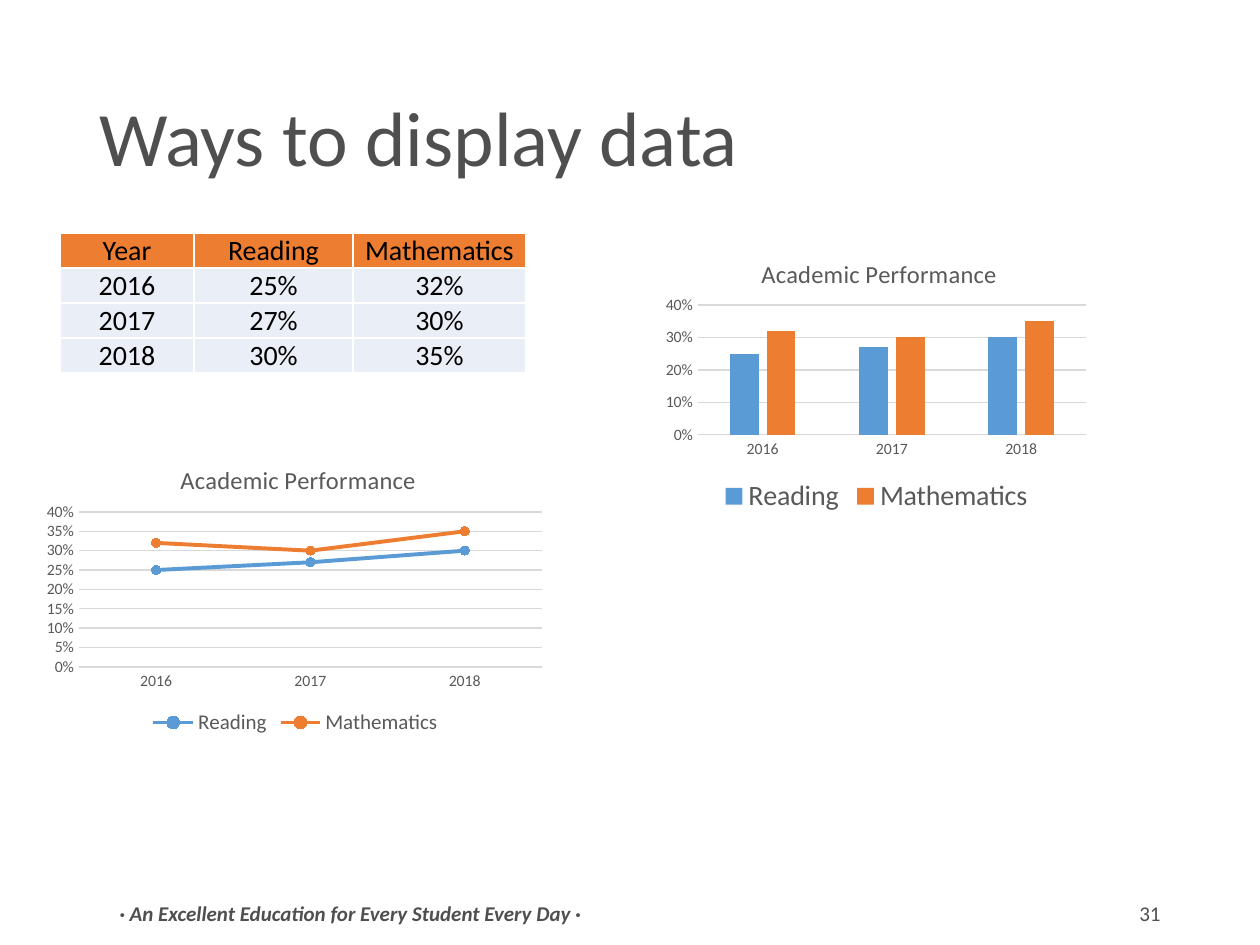
from pptx import Presentation
from pptx.chart.data import CategoryChartData
from pptx.dml.color import RGBColor as Rgb
from pptx.enum.chart import XL_CHART_TYPE as ChartType
from pptx.enum.chart import XL_LEGEND_POSITION as LegendPosition
from pptx.enum.chart import XL_MARKER_STYLE as Marker
from pptx.enum.chart import XL_TICK_MARK as Tick
from pptx.enum.text import MSO_ANCHOR as Anchor
from pptx.enum.text import PP_ALIGN as Align
from pptx.oxml.ns import qn
from pptx.util import Pt
from lxml.etree import SubElement, Element
from dataclasses import dataclass

PX = 914400 / 126
YEARS = ["2016", "2017", "2018"]
SCORES = {"Reading": [0.25, 0.27, 0.3], "Mathematics": [0.32, 0.3, 0.35]}


@dataclass(frozen=True)
class Theme:
    """Colours and type sizes of the slide."""
    font: str = "Calibri"
    ink: str = "4F4F4F"
    black: str = "000000"
    white: str = "FFFFFF"
    label: str = "595959"
    grid: str = "D9D9D9"
    body: str = "EAEFF7"
    blue: str = "5B9BD5"
    orange: str = "ED7D31"
    title: int = 44
    cell: int = 16
    heading: int = 14
    small: int = 12
    axis: int = 9


THEME = Theme()


def emu(*lengths):
    """Turn px lengths into EMU."""
    return [round(length * PX) for length in lengths]


def assign(target, values):
    """Set each named value on the target."""
    for name, value in values.items():
        setattr(target, name, value)


def style(font, size, color, **extra):
    """Give a font its face, size and colour."""
    assign(font, {"name": THEME.font, "size": Pt(size), **extra})
    font.color.rgb = Rgb.from_string(color)


def paint(fill, color):
    """Fill with one solid colour."""
    fill.solid()
    fill.fore_color.rgb = Rgb.from_string(color)


def stroke(line, color, width):
    """Draw a line in one colour and width."""
    line.color.rgb = Rgb.from_string(color)
    line.width = Pt(width)


def add_text(slide, box, text, size, anchor, align, spacing=None, **extra):
    """Place one line of text in a box."""
    frame = slide.shapes.add_textbox(*emu(*box)).text_frame
    assign(frame, {"word_wrap": True, "vertical_anchor": anchor})
    paragraph = frame.paragraphs[0]
    assign(paragraph, {"alignment": align, "line_spacing": spacing})
    run = paragraph.add_run()
    run.text = text
    style(run.font, size, THEME.ink, **extra)


def add_footer(slide, box):
    """Place the motto and the page number in the footer band."""
    left, top, width, height = box
    add_text(slide, (left, top, 495, height),
             "· An Excellent Education for Every Student Every Day ·",
             THEME.small, Anchor.BOTTOM, Align.CENTER, bold=True, italic=True)
    add_text(slide, (left + width - 283, top, 283, height), "31",
             THEME.small, Anchor.BOTTOM, Align.RIGHT)


def add_borders(cell):
    """Draw white borders round a cell."""
    properties = cell._tc.get_or_add_tcPr()
    for side in ("a:lnL", "a:lnR", "a:lnT", "a:lnB"):
        border = SubElement(properties, qn(side), w=str(Pt(1)))
        fill = SubElement(border, qn("a:solidFill"))
        SubElement(fill, qn("a:srgbClr"), val=THEME.white)


def add_score_table(slide, box):
    """Place the table of scores by year."""
    rows = [["Year", *SCORES]]
    for year, *scores in zip(YEARS, *SCORES.values()):
        rows.append([year, *(f"{score:.0%}" for score in scores)])
    table = slide.shapes.add_table(len(rows), len(rows[0]), *emu(*box)).table
    for column, width in zip(table.columns, emu(134, 159, 173)):
        column.width = width
    inset = emu(1)[0]
    layout = {"margin_left": inset, "margin_right": inset, "margin_top": inset,
              "margin_bottom": 0, "vertical_anchor": Anchor.BOTTOM}
    for r, row in enumerate(rows):
        table.rows[r].height = emu(35)[0]
        for c, text in enumerate(row):
            cell = table.cell(r, c)
            assign(cell, {"text": text, **layout})
            add_borders(cell)
            paint(cell.fill, THEME.body if r else THEME.orange)
            paragraph = cell.text_frame.paragraphs[0]
            paragraph.alignment = Align.CENTER
            style(paragraph.runs[0].font, THEME.cell, THEME.black)


def set_layout(parent, index, box, part, inner=False):
    """Fix a chart part at a px box within the chart."""
    for old in parent.findall(qn("c:layout")):
        parent.remove(old)
    layout = Element(qn("c:layout"))
    parent.insert(index, layout)
    manual = SubElement(layout, qn("c:manualLayout"))
    values = {"xMode": "edge", "yMode": "edge"}
    if inner:
        values = {"layoutTarget": "inner", **values}
    for name, length, whole in zip("xywh", part, box[2:] * 2):
        values[name] = f"{length / whole:.4f}"
    for name, value in values.items():
        SubElement(manual, qn(f"c:{name}"), val=value)


def add_score_chart(slide, box, kind, step, legend_size, heading, plot_box):
    """Place a chart of the scores and return it."""
    data = CategoryChartData(number_format="0%")
    data.categories = YEARS
    for subject, scores in SCORES.items():
        data.add_series(subject, scores)
    chart = slide.shapes.add_chart(kind, *emu(*box), data).chart
    style(chart.font, 10, THEME.black)
    assign(chart, {"has_title": True, "has_legend": True})
    title = chart.chart_title
    title.include_in_layout = False
    title.text_frame.text = "Academic Performance"
    style(title.text_frame.paragraphs[0].runs[0].font, THEME.heading,
          THEME.label, bold=False)
    assign(chart.legend, {"position": LegendPosition.BOTTOM,
                          "include_in_layout": False})
    style(chart.legend.font, legend_size, THEME.label)
    for axis in (chart.category_axis, chart.value_axis):
        assign(axis, {"major_tick_mark": Tick.NONE, "minor_tick_mark": Tick.NONE})
        style(axis.tick_labels.font, THEME.axis, THEME.label)
    stroke(chart.category_axis.format.line, THEME.grid, 0.75)
    scale = chart.value_axis
    assign(scale, {"minimum_scale": 0, "maximum_scale": 0.4,
                   "major_unit": step, "has_major_gridlines": True})
    scale.format.line.fill.background()
    stroke(scale.major_gridlines.format.line, THEME.grid, 0.75)
    assign(scale.tick_labels, {"number_format": "0%",
                               "number_format_is_linked": False})
    chart.plots[0].vary_by_categories = False
    set_layout(chart.element.find(".//" + qn("c:title")), 1, box, heading)
    set_layout(chart.element.find(".//" + qn("c:plotArea")), 0, box, plot_box, True)
    return chart


def add_column_chart(slide, box):
    """Place the clustered columns."""
    chart = add_score_chart(slide, box, ChartType.COLUMN_CLUSTERED, 0.1,
                            THEME.cell, (99, 20), (40, 72, 388, 130))
    plot = chart.plots[0]
    assign(plot, {"gap_width": 219, "overlap": -27})
    for series, color in zip(plot.series, (THEME.blue, THEME.orange)):
        paint(series.format.fill, color)


def add_line_chart(slide, box):
    """Place the lines with round markers."""
    chart = add_score_chart(slide, box, ChartType.LINE_MARKERS, 0.05,
                            THEME.small, (139, 20), (42, 74, 463, 155))
    for series, color in zip(chart.plots[0].series, (THEME.blue, THEME.orange)):
        series.smooth = False
        stroke(series.format.line, color, 2.25)
        assign(series.marker, {"style": Marker.CIRCLE, "size": 5})
        paint(series.marker.format.fill, color)
        stroke(series.marker.format.line, color, 0.75)


def main():
    """Build the slide and save it."""
    deck = Presentation()
    width, height = emu(1260, 945)
    assign(deck, {"slide_width": width, "slide_height": height})
    slide = deck.slides.add_slide(deck.slide_layouts[6])
    add_text(slide, (87, 50, 1086, 183), "Ways to display data", THEME.title,
             Anchor.MIDDLE, Align.LEFT, 0.9)
    add_footer(slide, (103, 882, 1070, 50))
    add_score_table(slide, (60, 233, 466, 140))
    add_column_chart(slide, (658, 233, 437, 286))
    add_line_chart(slide, (37, 438, 517, 302))
    deck.save("out.pptx")


if __name__ == "__main__":
    main()
